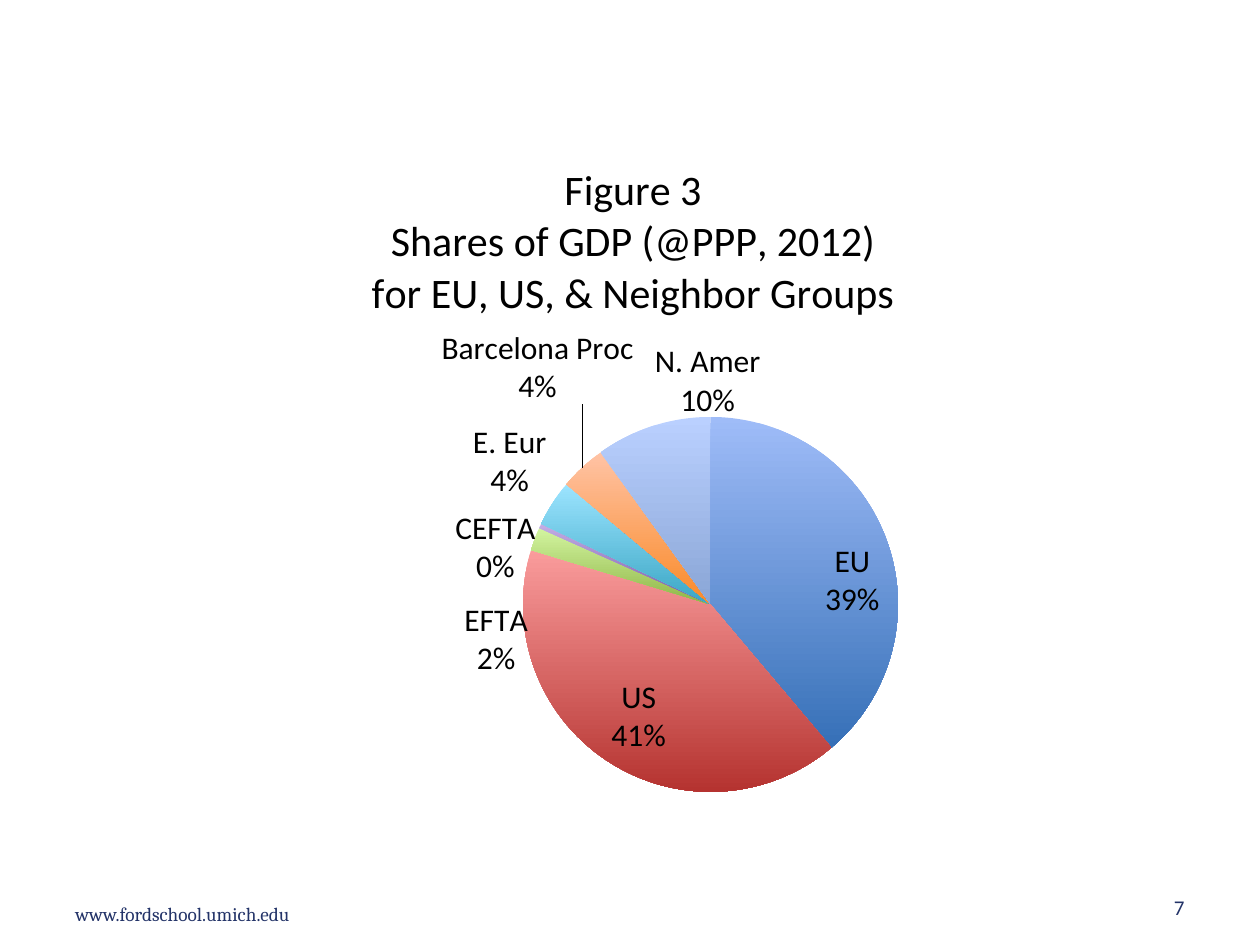
"""Build the slide with the pie chart of GDP shares."""
import pptx
import pptx.chart.data
import pptx.dml.color
import pptx.enum.chart
import pptx.enum.text
import pptx.oxml
import pptx.oxml.ns
import pptx.util

PX = 914400 / 126
COLORS = {"navy": "233368", "black": "000000"}
SLICE_COLORS = {
    "EU": ("9FBCF8", "3670B7"),
    "US": ("FA9C9C", "B53330"),
    "EFTA": ("D3F5A0", "8FB547"),
    "CEFTA": ("C3AEE6", "7A5AA5"),
    "E. Eur": ("9CE4FF", "3AA6C4"),
    "Barcelona Proc": ("FFC3A5", "F98A28"),
    "N. Amer": ("BAD0FF", "8AA6D6"),
}
SHARES = {"EU": 39, "US": 41, "EFTA": 2, "CEFTA": 0.4, "E. Eur": 4,
          "Barcelona Proc": 4, "N. Amer": 10}
LABEL_SHIFTS = {"EFTA": (0, 141), "CEFTA": (2, 63),
                "Barcelona Proc": (56, -57), "N. Amer": (110, 0)}
CHART_LEFT, CHART_TOP, CHART_WIDTH, CHART_HEIGHT = 94, 135, 1071, 675
qn = pptx.oxml.ns.qn


def write_text(frame, text, size, color, font="Calibri", align=None):
    for number, line in enumerate(text.split("\n")):
        paragraph = frame.paragraphs[0] if number == 0 else frame.add_paragraph()
        paragraph.alignment = align
        run = paragraph.add_run()
        run.text = line
        run.font.size = pptx.util.Pt(size)
        run.font.name = font
        run.font.bold = False
        run.font.color.rgb = pptx.dml.color.RGBColor.from_string(COLORS[color])


def place(parent, index, target="", **lengths):
    for old in parent.findall(qn("c:layout")):
        parent.remove(old)
    modes = "".join(f'<c:{axis}Mode val="edge"/>' for axis in "xy") if target else ""
    inner = '<c:layoutTarget val="inner"/>' if target == "inner" else ""
    values = "".join(
        f'<c:{key} val="{value / (CHART_WIDTH if key in "xw" else CHART_HEIGHT):.4f}"/>'
        for key, value in lengths.items())
    parent.insert(index, pptx.oxml.parse_xml(
        f'<c:layout {pptx.oxml.ns.nsdecls("c")}><c:manualLayout>'
        f'{inner}{modes}{values}</c:manualLayout></c:layout>'))


presentation = pptx.Presentation()
presentation.slide_width = pptx.util.Inches(10)
presentation.slide_height = pptx.util.Inches(7.5)
slide = presentation.slides.add_slide(presentation.slide_layouts[6])

left, right = pptx.enum.text.PP_ALIGN.LEFT, pptx.enum.text.PP_ALIGN.RIGHT
for text, box, size, font, align in (
    ("www.fordschool.umich.edu", (63, 895, 343, 37), 11, "Cambria", left),
    ("7", (903, 876, 294, 50), 12, "Calibri", right),
):
    footer = slide.shapes.add_textbox(*(round(length * PX) for length in box)).text_frame
    footer.word_wrap = True
    footer.vertical_anchor = pptx.enum.text.MSO_ANCHOR.BOTTOM
    write_text(footer, text, size=size, color="navy", font=font, align=align)

share_data = pptx.chart.data.CategoryChartData()
share_data.categories = list(SHARES)
share_data.add_series("Series 1", list(SHARES.values()))
chart_box = (CHART_LEFT, CHART_TOP, CHART_WIDTH, CHART_HEIGHT)
chart = slide.shapes.add_chart(
    pptx.enum.chart.XL_CHART_TYPE.PIE,
    *(round(length * PX) for length in chart_box), share_data).chart
chart.has_legend = False
chart.font.size = pptx.util.Pt(10)
chart.font.name = "Calibri"
chart.font.color.rgb = pptx.dml.color.RGBColor.from_string(COLORS["black"])

chart.has_title = True
write_text(chart.chart_title.text_frame,
           "Figure 3\nShares of GDP (@PPP, 2012)\nfor EU, US, & Neighbor Groups",
           size=24, color="black")
place(chart.element.find(".//" + qn("c:title")), 1, target="outer", x=274, y=25)
place(chart.element.find(".//" + qn("c:plotArea")), 0, target="inner",
      x=429, y=282, w=375, h=375)

chart.plots[0].vary_by_categories = True
shares = chart.plots[0].series[0]
positions = pptx.enum.chart.XL_LABEL_POSITION
for number, (name, gradient) in enumerate(SLICE_COLORS.items()):
    piece = shares.points[number]
    piece.format.line.fill.background()
    piece.format.fill.gradient()
    piece.format.fill.gradient_angle = 270
    for stop, color in zip(piece.format.fill.gradient_stops, gradient):
        stop.color.rgb = pptx.dml.color.RGBColor.from_string(color)
    label = piece.data_label
    label.font.size = pptx.util.Pt(18)
    label.font.name = "Calibri"
    label.font.color.rgb = pptx.dml.color.RGBColor.from_string(COLORS["black"])
    label.position = positions.INSIDE_END if name in ("EU", "US") else positions.OUTSIDE_END

for name, label in zip(SHARES, chart.element.iter(qn("c:dLbl"))):
    for part, shown in (("showVal", 0), ("showCatName", 1), ("showPercent", 1)):
        label.find(qn("c:" + part)).set("val", str(shown))
    label.append(pptx.oxml.parse_xml(
        f'<c:separator {pptx.oxml.ns.nsdecls("c")}>\n</c:separator>'))
    if name in LABEL_SHIFTS:
        shift_x, shift_y = LABEL_SHIFTS[name]
        place(label, 1, x=shift_x, y=shift_y)

presentation.save("out.pptx")
